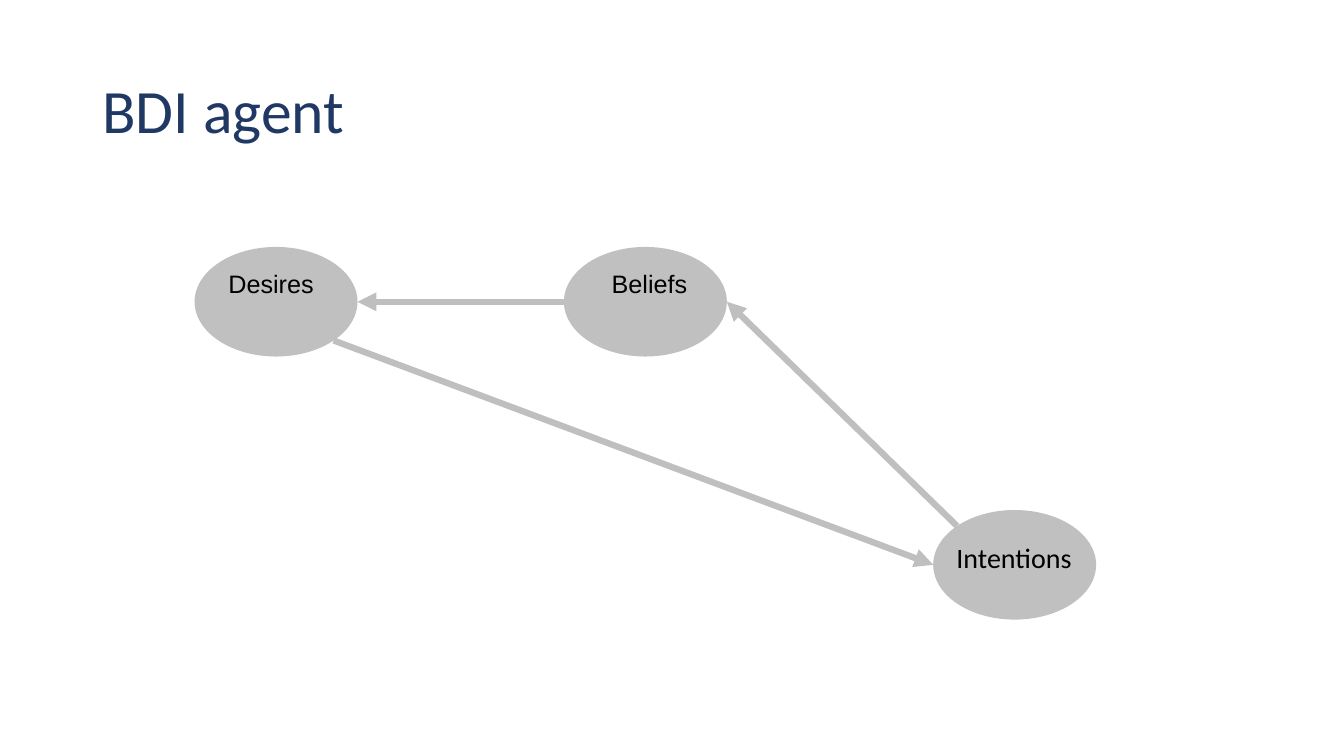
from math import cos, radians, sin

from lxml.etree import SubElement
from pptx import Presentation
from pptx.dml.color import RGBColor
from pptx.enum.shapes import MSO_CONNECTOR as CXN, MSO_SHAPE as SHAPE
from pptx.enum.text import MSO_ANCHOR as ANCHOR, PP_ALIGN as ALIGN
from pptx.oxml.ns import qn
from pptx.util import Pt

COLORS = {"title": "203864", "node": "C0C0C0", "arrow": "BFBFBF", "text": "000000"}
NODE_W, NODE_H = 116.4, 78.3
NODE_X, NODE_STEP = 139, 263.8
UPPER_Y, LOWER_Y = 176.4, 364.3


def rgb(name):
    return RGBColor.from_string(COLORS[name])


def write(tf, text, size, font, color):
    p = tf.paragraphs[0]
    p.alignment = ALIGN.LEFT
    r = p.add_run()
    r.text = text
    r.font.size = Pt(size)
    r.font.name = font
    r.font.color.rgb = rgb(color)
    return p


def add_text(slide, box, text, size, font, color, anchor=ANCHOR.TOP, wrap=True):
    tf = slide.shapes.add_textbox(*map(Pt, box)).text_frame
    tf.word_wrap = wrap
    tf.vertical_anchor = anchor
    return write(tf, text, size, font, color)


def add_title(slide, box, text):
    p = add_text(slide, box, text, 44, "Calibri", "title", ANCHOR.MIDDLE)
    p.line_spacing = 0.9


def add_node(slide, box, text="", indent=0):
    sp = slide.shapes.add_shape(SHAPE.OVAL, *map(Pt, box))
    sp.shadow.inherit = False
    sp.fill.solid()
    sp.fill.fore_color.rgb = rgb("node")
    sp.line.fill.background()
    if text:
        tf = sp.text_frame
        tf.word_wrap = True
        tf.vertical_anchor = ANCHOR.TOP
        p = write(tf, text, 18, "Arial", "text")
        if indent:
            p._p.get_or_add_pPr().set("marL", str(Pt(indent)))


def rim(box, angle):
    x, y, w, h = box
    a = radians(angle)
    return x + w / 2 * (1 + cos(a)), y + h / 2 * (1 + sin(a))


def add_arrow(slide, start, end):
    c = slide.shapes.add_connector(CXN.STRAIGHT, *map(Pt, start + end))
    c.line.color.rgb = rgb("arrow")
    c.line.width = Pt(4.5)
    SubElement(c.line._get_or_add_ln(), qn("a:tailEnd"), type="triangle")
    SubElement(c._element.spPr, qn("a:effectLst"))


def add_cycle(slide, x, upper, lower):
    desires, beliefs, intentions = [
        (x + i * NODE_STEP, y, NODE_W, NODE_H)
        for i, y in enumerate((upper, upper, lower))
    ]
    add_node(slide, desires, "Desires")
    add_node(slide, beliefs, "Beliefs", indent=10)
    add_node(slide, intentions)
    add_arrow(slide, rim(beliefs, 180), rim(desires, 0))
    add_arrow(slide, rim(desires, 45), rim(intentions, 180))
    add_arrow(slide, rim(intentions, 225), rim(beliefs, 0))
    label = (intentions[0] + 9.5, lower + 18, 98, 53.3)
    add_text(slide, label, "Intentions", 20, "Calibri", "text", wrap=False)


def main():
    prs = Presentation()
    prs.slide_width, prs.slide_height = Pt(960), Pt(540)
    slide = prs.slides.add_slide(prs.slide_layouts[6])
    add_title(slide, (66, 28.8, 828, 104.4), "BDI agent")
    add_cycle(slide, NODE_X, UPPER_Y, LOWER_Y)
    prs.save("out.pptx")


if __name__ == "__main__":
    main()
